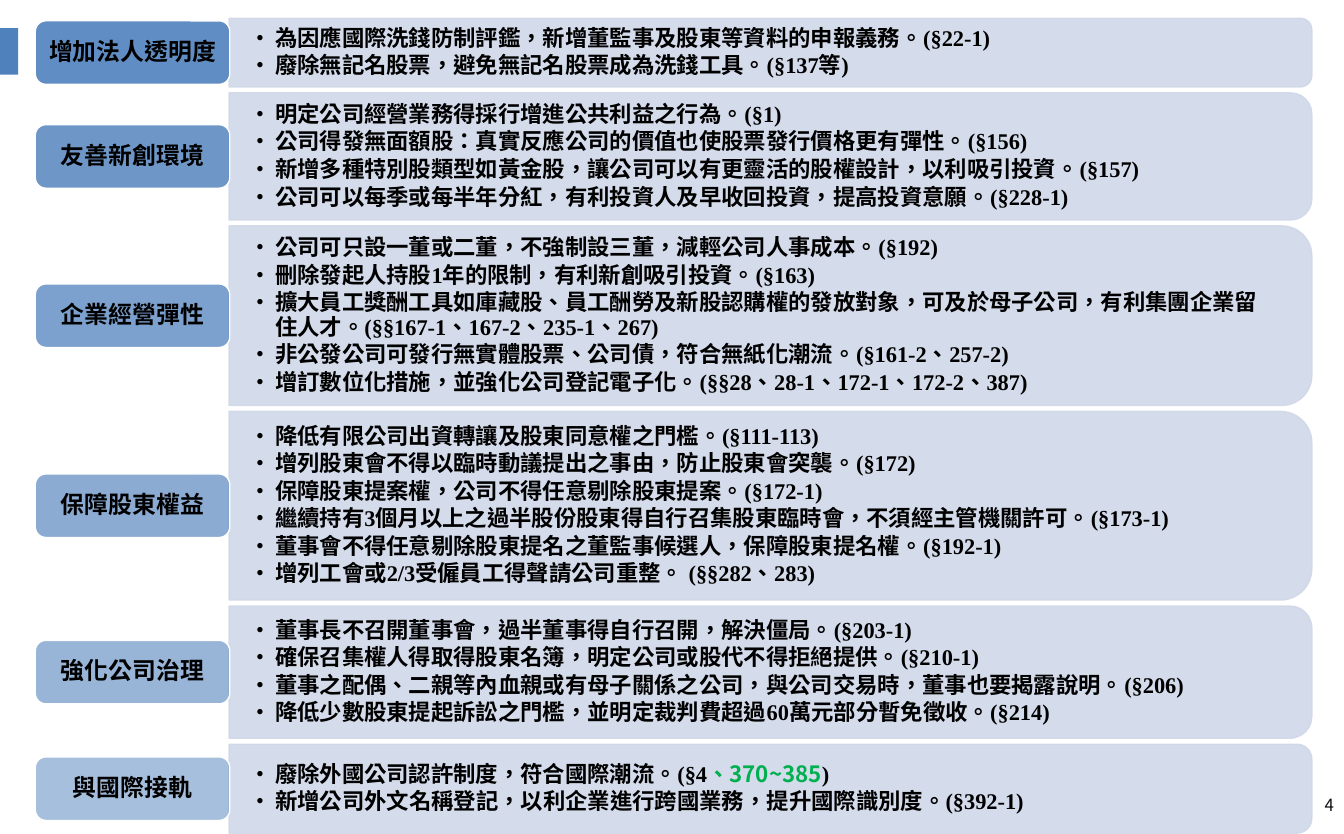
from dataclasses import dataclass
from typing import Any

from lxml.etree import SubElement
from pptx import Presentation
from pptx.dml.color import RGBColor
from pptx.enum.shapes import MSO_SHAPE
from pptx.enum.text import MSO_ANCHOR, MSO_AUTO_SIZE, PP_ALIGN
from pptx.oxml.ns import qn
from pptx.util import Cm, Pt

RECT, ROUND = MSO_SHAPE.RECTANGLE, MSO_SHAPE.ROUNDED_RECTANGLE
SIDE = MSO_SHAPE.ROUND_2_SAME_RECTANGLE
MIDDLE, TOP, FIXED = MSO_ANCHOR.MIDDLE, MSO_ANCHOR.TOP, MSO_AUTO_SIZE.NONE
LEFT, CENTER, RIGHT = PP_ALIGN.LEFT, PP_ALIGN.CENTER, PP_ALIGN.RIGHT

HEX = {"blue": "4F81BD", "pale": "D0D8E8", "white": "FFFFFF",
       "black": "000000", "grey": "0D0D0D", "green": "00B050"}
SERIF, SANS = "Times New Roman", "Noto Sans CJK SC"
GREEN = "、370~385"

# Layout in centimetres
FIRST, GAP = 0.46, 0.15
PANEL_X, PANEL_W = 5.77, 27.28
LABEL_X, LABEL_W, LABEL_H = 0.89, 4.9, 1.6
INDENT = 0.48

FRAME = {"word_wrap": True, "auto_size": FIXED, "vertical_anchor": MIDDLE}
LIST_FRAME = FRAME | {"margin_left": Cm(0.68), "margin_right": Cm(0.68),
                      "margin_top": Cm(0.36), "margin_bottom": Cm(0.36)}
LABEL_FRAME = FRAME | {"margin_left": Cm(0.26), "margin_right": Cm(0.26),
                       "margin_top": Cm(0.19), "margin_bottom": Cm(0.19)}
LIST_PARA = {"level": 1, "alignment": LEFT, "line_spacing": 0.9,
             "space_before": Pt(0), "space_after": Pt(2.4)}
LABEL_PARA = {"alignment": CENTER, "line_spacing": 0.9}
LIST_FONT = {"size": Pt(16), "name": SERIF, "bold": True}
LABEL_FONT = LIST_FONT | {"size": Pt(17)}
PAGE_FONT = {"size": Pt(12), "name": SANS, "bold": False}


@dataclass
class Topic:
    name: str
    height: float
    lines: list[str]


TOPICS = [
    Topic("增加法人透明度", 1.73, [
        "為因應國際洗錢防制評鑑，新增董監事及股東等資料的申報義務。(§22-1)",
        "廢除無記名股票，避免無記名股票成為洗錢工具。(§137等)"]),
    Topic("友善新創環境", 3.2, [
        "明定公司經營業務得採行增進公共利益之行為。(§1)",
        "公司得發無面額股：真實反應公司的價值也使股票發行價格更有彈性。(§156)",
        "新增多種特別股類型如黃金股，讓公司可以有更靈活的股權設計，以利吸引投資。(§157)",
        "公司可以每季或每半年分紅，有利投資人及早收回投資，提高投資意願。(§228-1)"]),
    Topic("企業經營彈性", 4.52, [
        "公司可只設一董或二董，不強制設三董，減輕公司人事成本。(§192)",
        "刪除發起人持股1年的限制，有利新創吸引投資。(§163)",
        "擴大員工獎酬工具如庫藏股、員工酬勞及新股認購權的發放對象，可及於母子公司，"
        "有利集團企業留住人才。(§§167-1、167-2、235-1、267)",
        "非公發公司可發行無實體股票、公司債，符合無紙化潮流。(§161-2、257-2)",
        "增訂數位化措施，並強化公司登記電子化。(§§28、28-1、172-1、172-2、387)"]),
    Topic("保障股東權益", 4.75, [
        "降低有限公司出資轉讓及股東同意權之門檻。(§111-113)",
        "增列股東會不得以臨時動議提出之事由，防止股東會突襲。(§172)",
        "保障股東提案權，公司不得任意剔除股東提案。(§172-1)",
        "繼續持有3個月以上之過半股份股東得自行召集股東臨時會，不須經主管機關許可。(§173-1)",
        "董事會不得任意剔除股東提名之董監事候選人，保障股東提名權。(§192-1)",
        "增列工會或2/3受僱員工得聲請公司重整。 (§§282、283)"]),
    Topic("強化公司治理", 3.33, [
        "董事長不召開董事會，過半董事得自行召開，解決僵局。(§203-1)",
        "確保召集權人得取得股東名簿，明定公司或股代不得拒絕提供。(§210-1)",
        "董事之配偶、二親等內血親或有母子關係之公司，與公司交易時，董事也要揭露說明。(§206)",
        "降低少數股東提起訴訟之門檻，並明定裁判費超過60萬元部分暫免徵收。(§214)"]),
    Topic("與國際接軌", 2.24, [
        "廢除外國公司認許制度，符合國際潮流。(§4、370~385)",
        "新增公司外文名稱登記，以利企業進行跨國業務，提升國際識別度。(§392-1)"]),
]


def apply(item: Any, form: dict[str, Any]) -> None:
    for key, value in form.items():
        setattr(item, key, value)


def place(shape: Any, x: float, y: float, w: float, h: float) -> None:
    apply(shape, {"left": Cm(x), "top": Cm(y), "width": Cm(w), "height": Cm(h)})


def tint(fill: Any, node: Any, color: str, alpha: int) -> None:
    fill.solid()
    fill.fore_color.rgb = RGBColor.from_string(HEX[color])
    if alpha < 100:
        paint = node.find(qn("a:solidFill"))[0]
        SubElement(paint, qn("a:alpha"), val=str(alpha * 1000))


def add_box(slide: Any, kind: Any, box: tuple[float, float, float, float],
            color: str, alpha: int = 100, edge: str = "",
            edge_alpha: int = 100) -> Any:
    shape = slide.shapes.add_shape(kind, *map(Cm, box))
    shape.shadow.inherit = False
    tint(shape.fill, shape.fill._xPr, color, alpha)
    if edge:
        shape.line.width = Pt(1)
        tint(shape.line.fill, shape.line.fill._xPr, edge, edge_alpha)
    else:
        shape.line.fill.background()
    return shape


def add_run(para: Any, text: str, form: dict[str, Any],
            color: str = "black") -> None:
    run = para.add_run()
    run.text = text
    apply(run.font, form)
    run.font.color.rgb = RGBColor.from_string(HEX[color])
    props = run._r.get_or_add_rPr()
    props.set("lang", "zh-TW")
    SubElement(props, qn("a:ea"), typeface=SANS)


def add_bullet(para: Any) -> None:
    props = para._p.get_or_add_pPr()
    props.set("marL", str(Cm(INDENT)))
    props.set("indent", str(-Cm(INDENT)))
    SubElement(props, qn("a:buFont"), typeface="Times New Roman")
    SubElement(props, qn("a:buChar"), char="•")


def add_list(slide: Any, lines: list[str], y: float, h: float) -> None:
    slide.shapes.clone_placeholder(slide.slide_layout.placeholders[1])
    body = slide.shapes[-1]
    place(body, PANEL_X, y, PANEL_W - 0.2, h)
    frame = body.text_frame
    apply(frame, LIST_FRAME)
    for i, line in enumerate(lines):
        para = frame.add_paragraph() if i else frame.paragraphs[0]
        apply(para, LIST_PARA)
        add_bullet(para)
        head, term, tail = line.partition(GREEN)
        add_run(para, head, LIST_FONT)
        if term:
            add_run(para, term, LIST_FONT | {"name": SANS}, "green")
            add_run(para, tail, LIST_FONT)


def add_topic(slide: Any, topic: Topic, y: float, alpha: int) -> None:
    h = topic.height
    mid = y + h / 2
    # Panel turned so that its round corners face right
    turned = (PANEL_X + (PANEL_W - h) / 2, mid - PANEL_W / 2, h, PANEL_W)
    add_box(slide, SIDE, turned, "pale", 90, "pale", 90).rotation = 90
    add_list(slide, topic.lines, y, h)
    # Label
    spot = (LABEL_X, mid - LABEL_H / 2, LABEL_W, LABEL_H)
    label = add_box(slide, ROUND, spot, "blue", alpha, "white")
    apply(label.text_frame, LABEL_FRAME)
    para = label.text_frame.paragraphs[0]
    apply(para, LABEL_PARA)
    add_run(para, topic.name, LABEL_FONT)


def main() -> None:
    deck = Presentation()
    apply(deck, {"slide_width": Cm(33.86), "slide_height": Cm(21)})
    slide = deck.slides.add_slide(deck.slide_layouts[1])
    for holder in list(slide.placeholders):
        holder.element.getparent().remove(holder.element)

    # Side mark and page number
    add_box(slide, RECT, (0, 0.71, 0.46, 1.17), "blue")
    page = slide.shapes.add_textbox(*map(Cm, (25.96, 19.89, 7.9, 1.11)))
    apply(page.text_frame, FRAME | {"vertical_anchor": TOP})
    para = page.text_frame.paragraphs[0]
    para.alignment = RIGHT
    add_run(para, "4", PAGE_FONT, "grey")

    # Topics from top to bottom, labels ever lighter
    y = FIRST
    for i, topic in enumerate(TOPICS):
        add_topic(slide, topic, y, 90 - 8 * i)
        y += topic.height + GAP
    deck.save("out.pptx")


if __name__ == "__main__":
    main()
